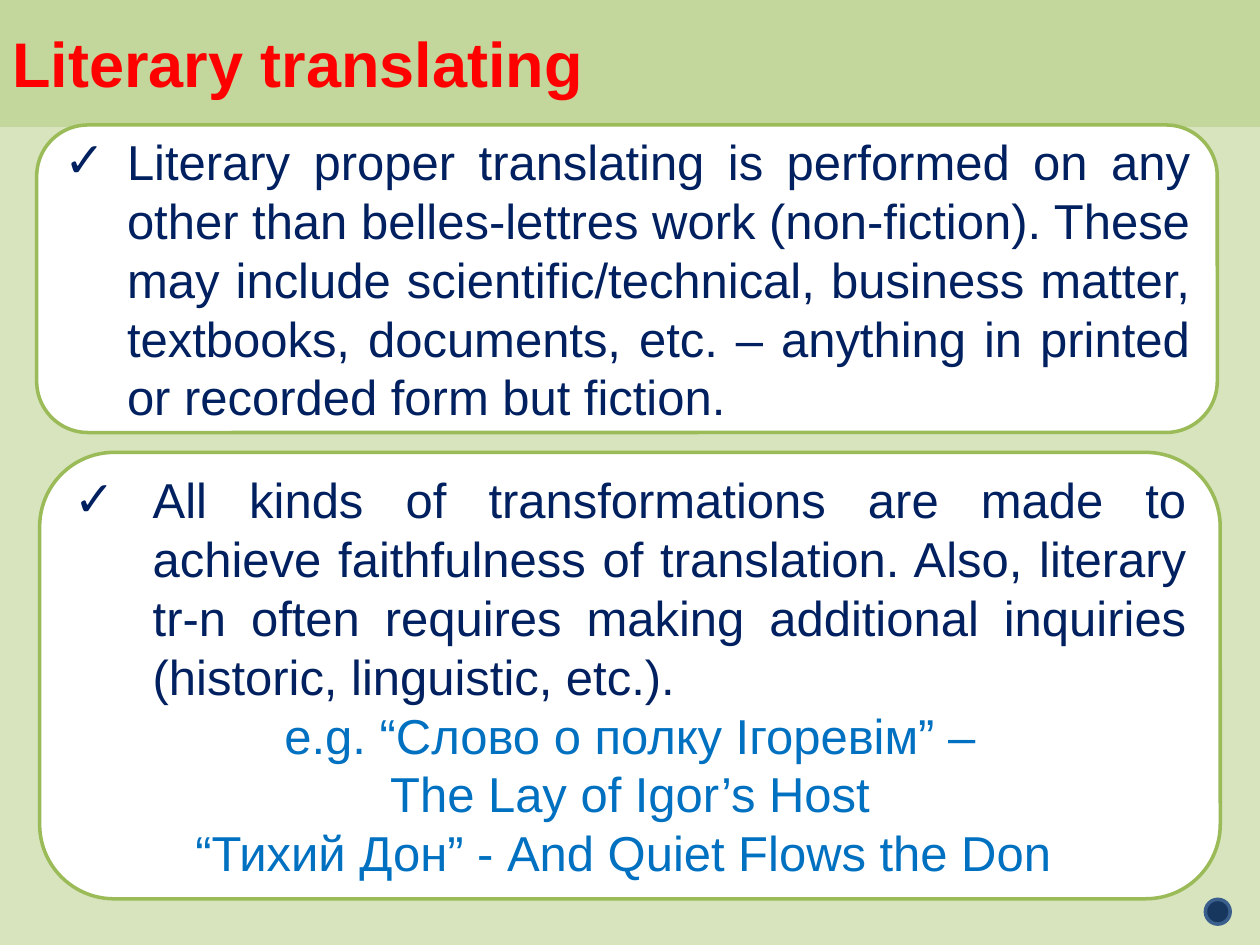
from lxml import etree
from pptx import Presentation
from pptx import util as u
from pptx.dml.color import RGBColor
from pptx.enum import shapes, text
from pptx.oxml.ns import qn

NAVY, BLUE, RED = "002060", "0070C0", "FF0000"
WHITE, GREEN, SAGE = "FFFFFF", "9BBB59", "C3D69B"
FONT = "Arial"


def colour(hex_value):
    return RGBColor.from_string(hex_value)


def add_panel(slide, preset, box, fill, line):
    panel = slide.shapes.add_shape(preset, *(u.Cm(length) for length in box))
    panel.shadow.inherit = False
    panel.fill.solid()
    panel.fill.fore_color.rgb = colour(fill)
    panel.line.color.rgb = colour(line)
    panel.line.width = u.Pt(2)
    panel.text_frame.word_wrap = True
    panel.text_frame.vertical_anchor = text.MSO_ANCHOR.MIDDLE
    return panel


def write(paragraph, wording, size, hue, align, bold=False):
    paragraph.text = wording
    paragraph.alignment = align
    font = paragraph.runs[0].font
    font.name = FONT
    font.size = u.Pt(size)
    font.bold = bold
    font.color.rgb = colour(hue)


def hang(paragraph, indent, tick):
    props = paragraph._p.get_or_add_pPr()
    props.set("marL", str(u.Cm(indent)))
    props.set("indent", str(-u.Cm(indent)))
    if tick:
        etree.SubElement(props, qn("a:buFont")).set("typeface", FONT)
        etree.SubElement(props, qn("a:buChar")).set("char", "✓")
    else:
        etree.SubElement(props, qn("a:buNone"))


def add_card(slide, box, indent, statement, examples=()):
    card = add_panel(slide, shapes.MSO_SHAPE.ROUNDED_RECTANGLE, box, WHITE, GREEN)
    frame = card.text_frame
    point = frame.paragraphs[0]
    write(point, statement, 28, NAVY, text.PP_ALIGN.JUSTIFY)
    hang(point, indent, True)
    for wording in examples:
        example = frame.add_paragraph()
        write(example, wording, 28, BLUE, text.PP_ALIGN.CENTER)
        hang(example, indent, False)


def main():
    deck = Presentation()
    deck.slide_width, deck.slide_height = u.Cm(25.4), u.Cm(19.05)
    slide = deck.slides.add_slide(deck.slide_layouts[6])
    slide.background.fill.solid()
    slide.background.fill.fore_color.rgb = colour("D7E4BD")

    banner = add_panel(slide, shapes.MSO_SHAPE.RECTANGLE, (0, 0, 25.4, 2.52), SAGE, SAGE)
    write(banner.text_frame.paragraphs[0], "Literary translating", 36, RED,
          text.PP_ALIGN.LEFT, bold=True)
    add_panel(slide, shapes.MSO_SHAPE.OVAL, (24.3, 18.13, 0.5, 0.5), "17375E", "3A5F8C")

    add_card(slide, (0.74, 2.52, 23.8, 6.2), 1.27,
             "Literary proper translating is performed on any other than belles-lettres "
             "work (non-fiction). These may include scientific/technical, business matter, "
             "textbooks, documents, etc. – anything in printed or recorded form but fiction. ")
    add_card(slide, (0.8, 9.12, 23.8, 9), 1.59,
             "All kinds of transformations are made to achieve faithfulness of translation. "
             "Also, literary tr-n often requires making additional inquiries "
             "(historic, linguistic, etc.). ",
             ("e.g. “Слово о полку Ігоревім” –",
              "The Lay of Igor’s Host",
              "“Тихий Дон” - And Quiet Flows the Don "))
    deck.save("out.pptx")


if __name__ == "__main__":
    main()
